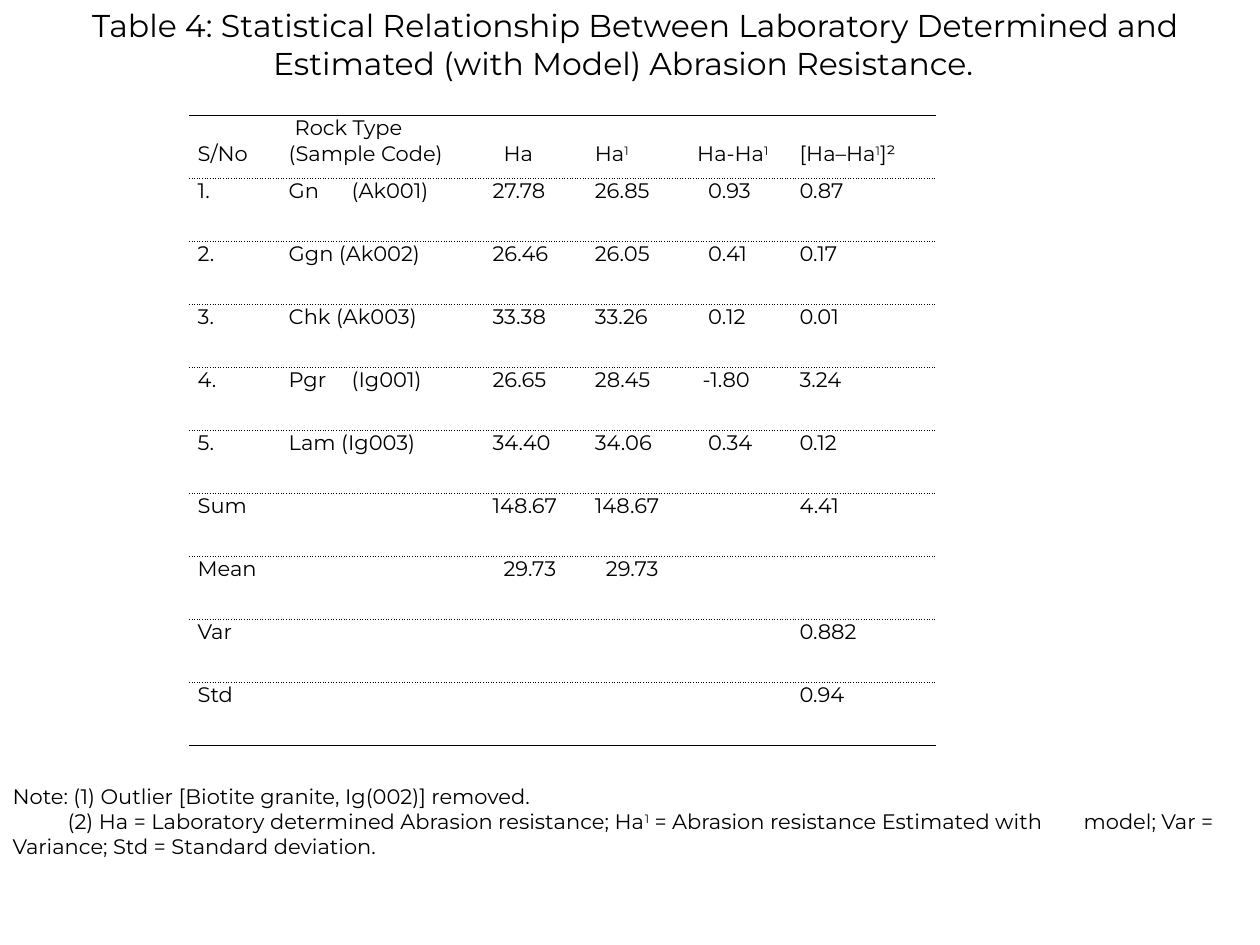
from lxml.etree import SubElement
from pptx import Presentation
from pptx.dml.color import RGBColor
from pptx.enum.text import MSO_ANCHOR as Anchor, MSO_AUTO_SIZE as AutoSize, PP_ALIGN as Align
from pptx.oxml.ns import qn
from pptx.util import Pt

BLACK = RGBColor(0, 0, 0)
FONT = "Montserrat"
LINE_HEIGHT = 14.6
ROW_HEIGHT = 36
SHIFT = 6.3
COLUMN_WIDTHS = [52, 116.5, 58.5, 58.5, 58.5, 83]
ROWS = [
    ["S/No", "Rock Type (Sample Code)", "Ha", "Ha^1", "Ha-Ha^1", "[Ha–Ha^1^]²"],
    ["1.", "Gn\t(Ak001)", "27.78", "26.85", "0.93", "0.87"],
    ["2.", "Ggn (Ak002)", "26.46", "26.05", "0.41", "0.17"],
    ["3.", "Chk (Ak003)", "33.38", "33.26", "0.12", "0.01"],
    ["4.", "Pgr\t(Ig001)", "26.65", "28.45", "-1.80", "3.24"],
    ["5.", "Lam (Ig003)", "34.40", "34.06", "0.34", "0.12"],
    ["Sum", "", "148.67", "148.67", "", "4.41"],
    ["Mean", "", "29.73", "29.73", "", ""],
    ["Var", "", "", "", "", "0.882"],
    ["Std", "", "", "", "", "0.94"],
]
INDENTS = {(0, 1): 3.4, (0, 2): SHIFT, (7, 2): SHIFT, (7, 3): SHIFT}
INDENTS |= {(row, 4): SHIFT for row in (1, 2, 3, 5)} | {(4, 4): SHIFT / 2}


def write_para(para, text, size=12, align=Align.LEFT, left=0, right=0, indent=0, tab=None):
    para.alignment = align
    para.space_before = Pt(0)
    para.line_spacing = 1.0
    props = para._p.get_or_add_pPr()
    for name, value in (("marL", left), ("marR", right), ("indent", indent)):
        props.set(name, str(int(Pt(value))))
    SubElement(props, qn("a:buNone"))
    if tab:
        stops = SubElement(props, qn("a:tabLst"))
        SubElement(stops, qn("a:tab"), pos=str(int(Pt(tab))), algn="l")
    para.font.size = Pt(size)
    for index, part in enumerate(text.split("^")):
        if not part:
            continue
        span = para.add_run()
        span.text = part
        span.font.name = FONT
        span.font.size = Pt(size)
        span.font.color.rgb = BLACK
        if index % 2:
            span._r.get_or_add_rPr().set("baseline", "30000")


def fill_placeholder(box, bounds, paragraphs):
    box.left, box.top, box.width, box.height = map(Pt, bounds)
    frame = box.text_frame
    frame.word_wrap = True
    frame.auto_size = AutoSize.NONE
    frame.vertical_anchor = Anchor.TOP
    for index, (text, style) in enumerate(paragraphs):
        para = frame.add_paragraph() if index else frame.paragraphs[0]
        write_para(para, text, **style)


def set_border(cell, side, dash=None):
    props = cell._tc.get_or_add_tcPr()
    line = SubElement(props, qn(f"a:ln{side}"), w=str(int(Pt(1))))
    if dash is None:
        SubElement(line, qn("a:noFill"))
        return
    fill = SubElement(line, qn("a:solidFill"))
    SubElement(fill, qn("a:srgbClr"), val=str(BLACK))
    SubElement(line, qn("a:prstDash"), val=dash)


def format_cell(cell, row, column):
    cell.margin_left = cell.margin_right = Pt(5)
    header = row == 0
    single_line_header = header and column != 1
    cell.margin_top = Pt(LINE_HEIGHT if single_line_header else 0)
    cell.margin_bottom = Pt(0)
    cell.vertical_anchor = Anchor.TOP
    set_border(cell, "L")
    set_border(cell, "R")
    set_border(cell, "T", "solid" if header else "sysDot")
    set_border(cell, "B", "solid" if row == len(ROWS) - 1 else "sysDot")
    cell.fill.background()
    text = ROWS[row][column]
    write_para(cell.text_frame.paragraphs[0], text,
               indent=INDENTS.get((row, column), 0), tab=27.5 if "\t" in text else None)


def add_statistics_table(page):
    table = page.shapes.add_table(len(ROWS), len(COLUMN_WIDTHS), Pt(108), Pt(66),
                                  Pt(sum(COLUMN_WIDTHS)), Pt(ROW_HEIGHT * len(ROWS))).table
    table.first_row = table.horz_banding = False
    for column, width in zip(table.columns, COLUMN_WIDTHS):
        column.width = Pt(width)
    for row in range(len(ROWS)):
        table.rows[row].height = Pt(ROW_HEIGHT)
        for column in range(len(COLUMN_WIDTHS)):
            format_cell(table.cell(row, column), row, column)


def main():
    deck = Presentation()
    deck.slide_width, deck.slide_height = Pt(720), Pt(540)
    page = deck.slides.add_slide(deck.slide_layouts[1])
    heading = {"size": 18, "align": Align.CENTER}
    fill_placeholder(page.shapes.title, (0, 0, 717, 51), [
        ("Table 4: Statistical Relationship Between Laboratory Determined and", heading | {"left": 9.4}),
        ("Estimated (with Model) Abrasion Resistance.", heading | {"right": 4.7}),
    ])
    add_statistics_table(page)
    fill_placeholder(page.placeholders[1], (0, 444, 720, 51), [
        ("Note: (1) Outlier [Biotite granite, Ig(002)] removed.", {}),
        ("(2) Ha = Laboratory determined Abrasion resistance; Ha^1^ = Abrasion resistance "
         "Estimated with\tmodel; Var = Variance; Std = Standard deviation.",
         {"indent": 31.5, "tab": 607}),
    ])
    deck.save("out.pptx")


if __name__ == "__main__":
    main()
